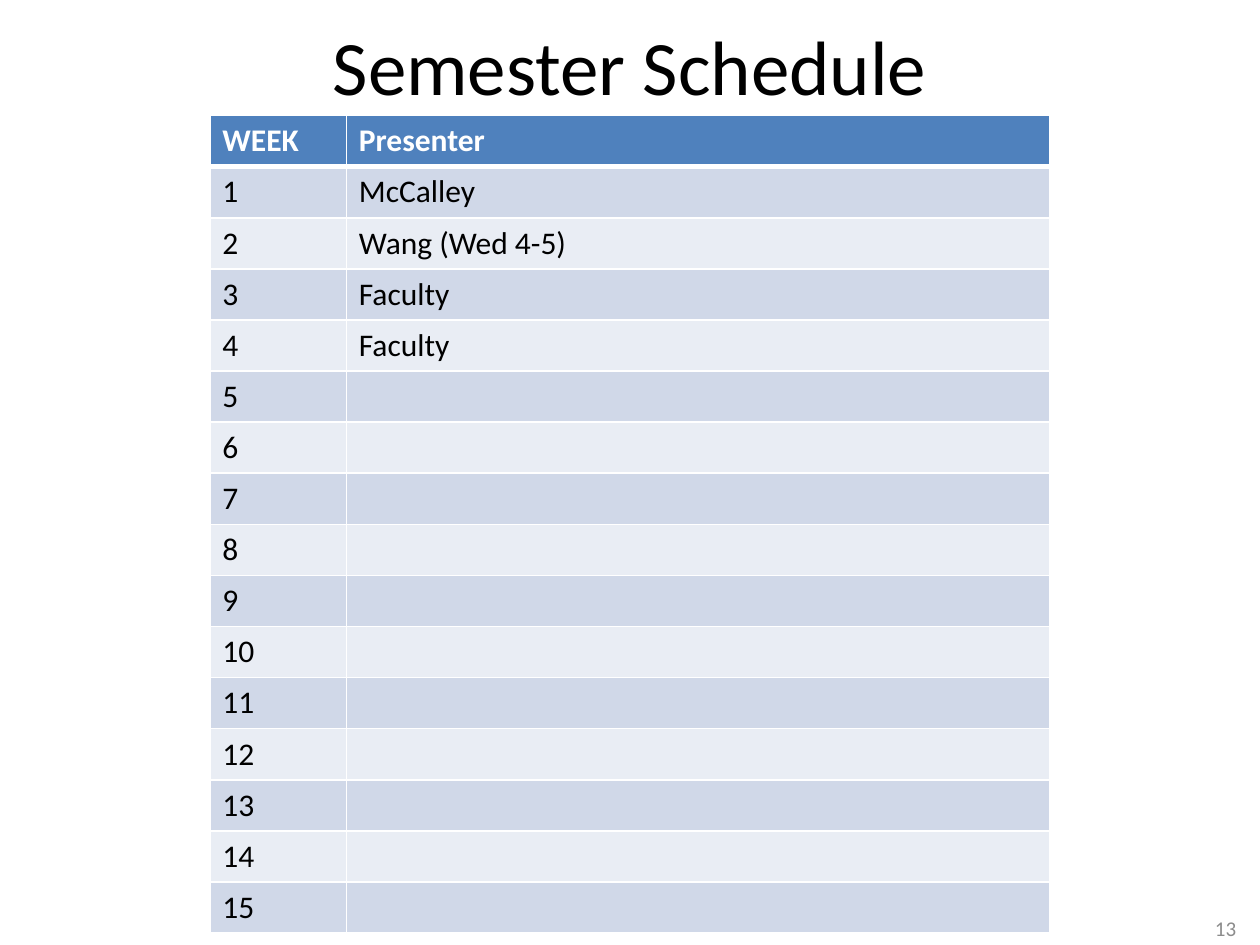
from lxml import etree
from pptx import Presentation
from pptx.dml.color import RGBColor
from pptx.enum import text
from pptx.oxml import ns
from pptx.util import Cm, Pt


def style(para, size, color, bold=False, align=text.PP_ALIGN.LEFT):
    para.alignment = align
    font = para.font
    for run in para.runs:
        font = run.font
    font.name, font.size, font.bold = "Calibri", Pt(size), bold
    font.color.rgb = RGBColor.from_string(color)


def edge(cell, side, width):
    """Draw one white border; side is L, R, T or B."""
    line = etree.SubElement(cell._tc.get_or_add_tcPr(), ns.qn("a:ln" + side), w=str(Pt(width)))
    fill = etree.SubElement(line, ns.qn("a:solidFill"))
    etree.SubElement(fill, ns.qn("a:srgbClr"), val="FFFFFF")


prs = Presentation()
prs.slide_width, prs.slide_height = Cm(25.4), Cm(19.05)
slide = prs.slides.add_slide(prs.slide_layouts[5])

# Title
title = slide.shapes.title
title.left, title.top, title.width, title.height = Cm(1.27), Cm(0.2), Cm(22.86), Cm(2.2)
title.text_frame.text = "Semester Schedule"
title.text_frame.vertical_anchor = text.MSO_ANCHOR.MIDDLE
style(title.text_frame.paragraphs[0], 44, "000000", align=text.PP_ALIGN.CENTER)

# Page number
page = slide.shapes.add_textbox(Cm(19.25), Cm(18.2), Cm(5.92), Cm(1.02)).text_frame
page.word_wrap = True
page.vertical_anchor = text.MSO_ANCHOR.MIDDLE
page.text = "13"
style(page.paragraphs[0], 12, "8C8C8C", align=text.PP_ALIGN.RIGHT)

# Schedule
weeks = 15
names = ["McCalley", "Wang (Wed 4-5)", "Faculty", "Faculty"]
names += [""] * (weeks - len(names))
rows = [("WEEK", "Presenter")]
rows += [(str(week), name) for week, name in enumerate(names, 1)]

high = Cm(1.03)
table = slide.shapes.add_table(
    len(rows), 2, Cm(4.23), Cm(2.33), Cm(16.93), high * len(rows)).table
table.columns[0].width, table.columns[1].width = Cm(2.75), Cm(14.18)

for r, row in enumerate(rows):
    table.rows[r].height = high
    head = r == 0
    fill = "4F81BD" if head else ("E9EDF4", "D0D8E8")[r % 2]
    for c, word in enumerate(row):
        cell = table.cell(r, c)
        cell.text_frame.text = word
        style(cell.text_frame.paragraphs[0], 18, "FFFFFF" if head else "000000", head)
        edge(cell, "L", 1)
        edge(cell, "R", 1)
        edge(cell, "T", 3 if r == 1 else 1)
        edge(cell, "B", 3 if head else 1)
        cell.fill.solid()
        cell.fill.fore_color.rgb = RGBColor.from_string(fill)

prs.save("out.pptx")
